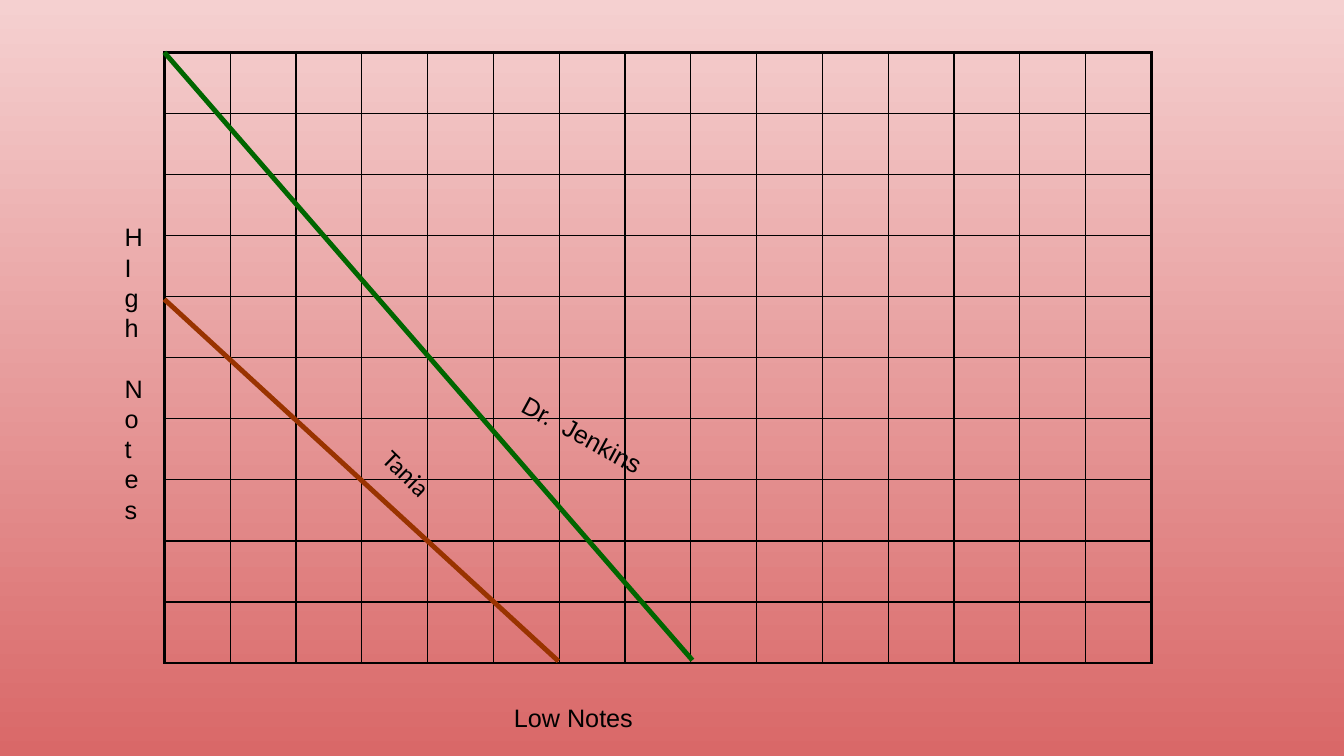
from lxml.etree import SubElement
from pptx import Presentation
from pptx.dml.color import RGBColor
from pptx.enum.shapes import MSO_CONNECTOR as Connector
from pptx.enum.text import MSO_AUTO_SIZE as AutoSize
from pptx.oxml import parse_xml
from pptx.oxml.ns import nsdecls, qn
from pptx.util import Pt


def color(value):
    return RGBColor.from_string(value)


class NotesSlide:
    ink = "000000"
    text_size = 18
    thin, thick = 1, 2.25
    curve_width = 3.5

    def __init__(self, deck):
        self.page = deck.slides.add_slide(deck.slide_layouts[6])

    def background(self, top, bottom):
        fill = self.page.background.fill
        fill.gradient()
        fill.gradient_angle = 270
        for stop, value, position in zip(fill.gradient_stops, (top, bottom), (0, 1)):
            stop.color.rgb = color(value)
            stop.position = position

    def border(self, cell, index, side, width):
        line = parse_xml(
            f'<a:ln{side} {nsdecls("a")} w="{Pt(width)}"><a:solidFill>'
            f'<a:srgbClr val="{self.ink}"/></a:solidFill></a:ln{side}>'
        )
        cell._tc.get_or_add_tcPr().insert(index, line)

    def grid(self, left, top, columns, rows, column_width, row_height):
        frame = self.page.shapes.add_table(
            rows, columns, Pt(left), Pt(top),
            Pt(columns * column_width), Pt(rows * row_height),
        )
        table = frame.table
        table.first_row = table.horz_banding = False
        for column in table.columns:
            column.width = Pt(column_width)
        for row in table.rows:
            row.height = Pt(row_height)
        for r in range(rows):
            for c in range(columns):
                cell = table.cell(r, c)
                cell.fill.background()
                outer = {"L": c == 0, "R": c == columns - 1,
                         "T": r == 0, "B": r == rows - 1}
                for index, (side, edge) in enumerate(outer.items()):
                    self.border(cell, index, side, self.thick if edge else self.thin)

    def label(self, text, left, top, width, height,
              rotation=0, font="Arial", spacing=None):
        box = self.page.shapes.add_textbox(Pt(left), Pt(top), Pt(width), Pt(height))
        box.rotation = rotation
        frame = box.text_frame
        frame.word_wrap = True
        frame.auto_size = AutoSize.NONE
        frame.text = text
        para = frame.paragraphs[0]
        if spacing:
            para.line_spacing = spacing
        for span in para.runs:
            span.font.name = font
            span.font.size = Pt(self.text_size)
            span.font.color.rgb = color(self.ink)

    def curve(self, start, end, value):
        line = self.page.shapes.add_connector(
            Connector.STRAIGHT, *map(Pt, start), *map(Pt, end))
        line.line.color.rgb = color(value)
        line.line.width = Pt(self.curve_width)
        SubElement(line._element.spPr, qn("a:effectLst"))


def main():
    deck = Presentation()
    deck.slide_width, deck.slide_height = Pt(960), Pt(540)
    slide = NotesSlide(deck)
    slide.background("F5D0D0", "D96868")

    left, top = 117.4, 37.4
    slide.grid(left, top, 15, 10, 47, 43.65)
    slide.label("HIgh Notes", 82, 154.8, 23.8, 247)
    slide.label("Low Notes", 360, 498.2, 138, 29)
    slide.curve((left, top), (494.6, 471.6), "006600")
    slide.curve((left, 213.8), (398.9, 472.3), "993300")
    slide.label("Dr.  Jenkins", 360, 303.1, 138, 29, rotation=28.5)
    slide.label("Tania", 245.5, 365.8, 165.6, 29,
                rotation=44.2, font="Calibri", spacing=0.8)
    deck.save("out.pptx")


if __name__ == "__main__":
    main()
